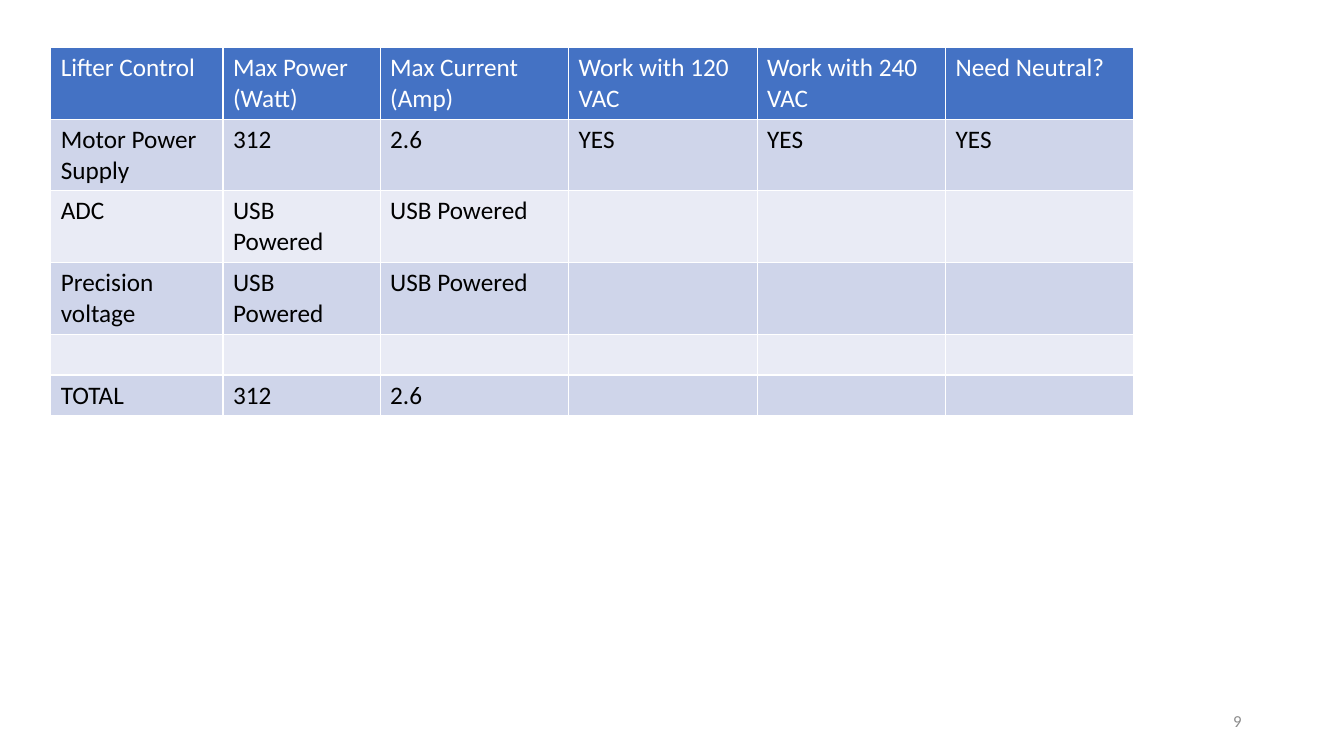
from pptx import Presentation
from pptx.dml.color import RGBColor
from pptx.enum.text import MSO_ANCHOR, PP_ALIGN
from pptx.util import Cm, Pt

WHITE = RGBColor(0xFF, 0xFF, 0xFF)
BLACK = RGBColor(0x00, 0x00, 0x00)
GREY = RGBColor(0x8C, 0x8C, 0x8C)
HEADER_BLUE = RGBColor(0x44, 0x72, 0xC4)
BAND_DARK = RGBColor(0xCF, 0xD5, 0xEA)
BAND_LIGHT = RGBColor(0xE9, 0xEB, 0xF5)

POWER_ROWS = [
    ["Lifter Control", "Max Power (Watt)", "Max Current (Amp)",
     "Work with 120 VAC", "Work with 240 VAC", "Need Neutral?"],
    ["Motor Power Supply", "312", "2.6", "YES", "YES", "YES"],
    ["ADC", "USB Powered", "USB Powered", "", "", ""],
    ["Precision voltage", "USB Powered", "USB Powered", "", "", ""],
    ["", "", "", "", "", ""],
    ["TOTAL", "312", "2.6", "", "", ""],
]
COLUMN_WIDTHS = [4.34, 3.96] + [4.75] * 4


def add_text(paragraph, text, size, color):
    run = paragraph.add_run()
    run.text = text
    text_format = {"name": "Calibri", "size": Pt(size), "bold": False}
    for attribute, value in text_format.items():
        setattr(run.font, attribute, value)
    run.font.color.rgb = color


prs = Presentation()
prs.slide_width, prs.slide_height = Cm(33.87), Cm(19.05)
slide = prs.slides.add_slide(prs.slide_layouts[6])

# Power table; its default style draws the white cell borders
power_frame = slide.shapes.add_table(
    len(POWER_ROWS), len(COLUMN_WIDTHS), Cm(1.28), Cm(1.2), Cm(27.3), Cm(9.17))
power_table = power_frame.table
for column, width in zip(power_table.columns, COLUMN_WIDTHS):
    column.width = Cm(width)

for row_index, (row, texts) in enumerate(zip(power_table.rows, POWER_ROWS)):
    row.height = Cm(1.03)
    if row_index == 0:
        fill_color, text_color = HEADER_BLUE, WHITE
    else:
        fill_color = BAND_DARK if row_index % 2 else BAND_LIGHT
        text_color = BLACK
    for cell, text in zip(row.cells, texts):
        cell.fill.solid()
        cell.fill.fore_color.rgb = fill_color
        if text:
            add_text(cell.text_frame.paragraphs[0], text, 18, text_color)
power_frame.height = Cm(9.17)

# Page number
page_number = slide.shapes.add_textbox(
    Cm(23.92), Cm(17.66), Cm(7.62), Cm(1.01)).text_frame
page_number.word_wrap = True
page_number.vertical_anchor = MSO_ANCHOR.MIDDLE
page_number.paragraphs[0].alignment = PP_ALIGN.RIGHT
add_text(page_number.paragraphs[0], "9", 12, GREY)

prs.save("out.pptx")
